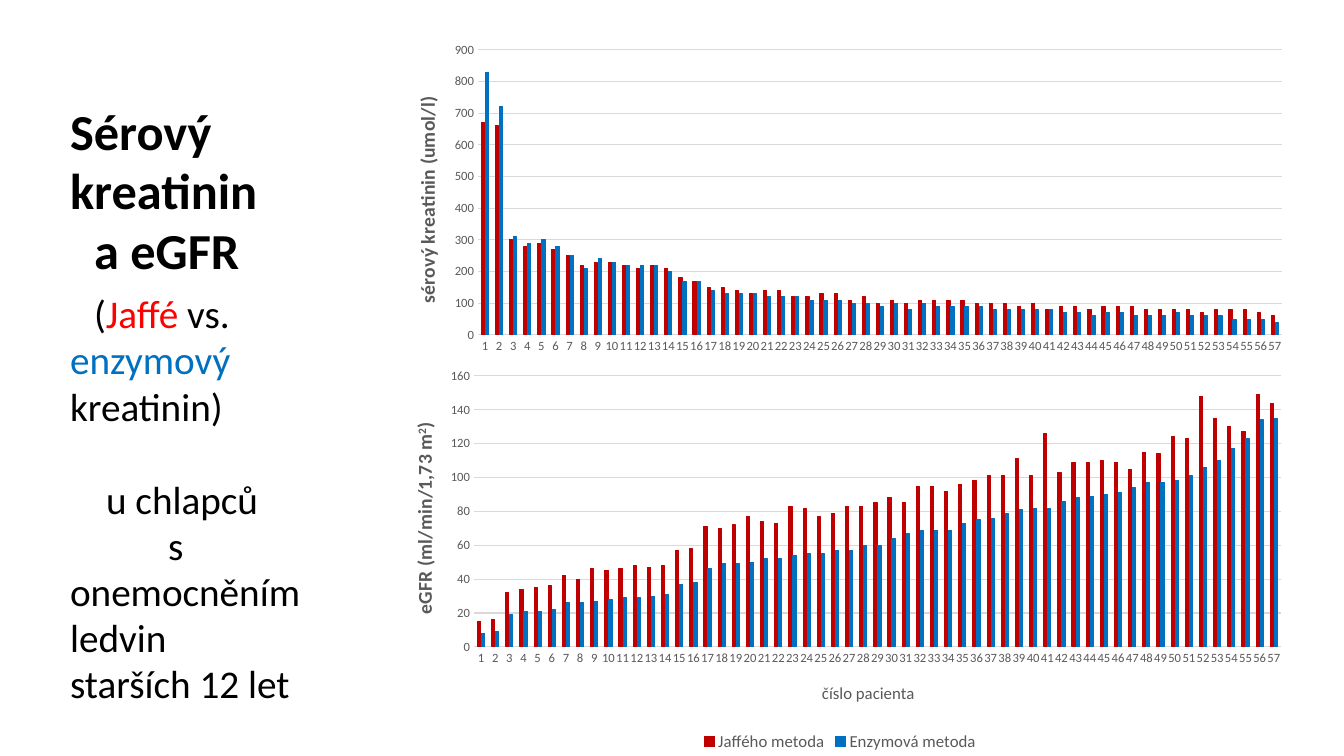
from lxml import etree
from pptx import Presentation
from pptx import util as u
from pptx.chart import data as chart_data
from pptx.dml.color import RGBColor
from pptx.enum import chart as ec, text as et
from pptx.oxml import ns

PX = 12192000 / 1344
FONT, GREY, GRID, BLACK = "Calibri", "595959", "D9D9D9", "000000"
RED, BLUE = "C00000", "0070C0"


def style(font, size, colour, bold=False):
    font.name, font.size, font.bold = FONT, u.Pt(size), bold
    font.color.rgb = RGBColor.from_string(colour)


def place(parent, frame, **lengths):
    layout = parent.find(ns.qn("c:layout"))
    if layout is None:
        layout = etree.Element(ns.qn("c:layout"))
        parent.insert(0, layout)
    manual = etree.SubElement(layout, ns.qn("c:manualLayout"))
    if "w" in lengths:
        etree.SubElement(manual, ns.qn("c:layoutTarget")).set("val", "inner")
    for key in "xy":
        etree.SubElement(manual, ns.qn(f"c:{key}Mode")).set("val", "edge")
    left, top, width, height = frame
    start = {"x": left, "y": top, "w": 0, "h": 0}
    full = {"x": width, "y": height, "w": width, "h": height}
    for key, length in lengths.items():
        share = (length - start[key]) / full[key]
        etree.SubElement(manual, ns.qn(f"c:{key}")).set("val", f"{share:.4f}")


presentation = Presentation()
presentation.slide_width, presentation.slide_height = round(1344 * PX), round(756 * PX)
slide = presentation.slides.add_slide(presentation.slide_layouts[5])

title = slide.shapes.title
title.left, title.top, title.width, title.height = [round(n * PX) for n in (60, 98, 312, 526)]
frame = title.text_frame
frame.word_wrap = True
frame.auto_size = et.MSO_AUTO_SIZE.NONE
frame.vertical_anchor = et.MSO_ANCHOR.TOP

title_paragraphs = [
    (0, 0, 36, [("Sérový kreatinin", BLACK)]),
    (24, 0, 36, [("a eGFR", BLACK)]),
    (24, 11, 28, [("(", BLACK), ("Jaffé", "FF0000"), (" vs. ", BLACK),
                  ("enzymový", BLUE), (" kreatinin)", BLACK)]),
    (36, 47, 28, [("u chlapců", BLACK)]),
    (98, 0, 28, [("s onemocněním ledvin", BLACK)]),
    (0, 0, 28, [("starších 12 let", BLACK)]),
]
for number, (indent, gap, size, runs) in enumerate(title_paragraphs):
    paragraph = frame.paragraphs[0] if number == 0 else frame.add_paragraph()
    paragraph.alignment = et.PP_ALIGN.LEFT
    paragraph.line_spacing = 0.98
    paragraph.space_before = round(gap * PX)
    paragraph._p.get_or_add_pPr().set("indent", str(round(indent * PX)))
    for words, colour in runs:
        run = paragraph.add_run()
        run.text = words
        style(run.font, size, colour, size == 36)

egfr = [
    [15, 16, 32, 34, 35, 36, 42, 40, 46, 45, 46, 48, 47, 48, 57, 58, 71, 70, 72,
     77, 74, 73, 83, 82, 77, 79, 83, 83, 85, 88, 85, 95, 95, 92, 96, 98, 101, 101,
     111, 101, 126, 103, 109, 109, 110, 109, 105, 115, 114, 124, 123, 148, 135, 130,
     127, 149, 144],
    [8, 9, 19, 21, 21, 22, 26, 26, 27, 28, 29, 29, 30, 31, 37, 38, 46, 49, 49,
     50, 52, 52, 54, 55, 55, 57, 57, 60, 60, 64, 67, 69, 69, 69, 73, 75, 76, 79,
     81, 82, 82, 86, 88, 89, 90, 91, 94, 97, 97, 98, 101, 106, 110, 117, 123, 134, 135],
]
creatinine = [
    [670, 660, 300, 280, 290, 270, 250, 220, 230, 230, 220, 210, 220, 210, 180, 170,
     150, 150, 140, 130, 140, 140, 120, 120, 130, 130, 110, 120, 100, 110, 100, 110,
     110, 110, 110, 100, 100, 100, 90, 100, 80, 90, 90, 80, 90, 90, 90, 80, 80, 80,
     80, 70, 80, 80, 80, 70, 60],
    [830, 720, 310, 290, 300, 280, 250, 210, 240, 230, 220, 220, 220, 200, 170, 170,
     140, 130, 130, 130, 120, 120, 120, 110, 110, 110, 100, 100, 90, 100, 80, 100,
     90, 90, 90, 90, 80, 80, 80, 80, 80, 70, 70, 60, 70, 70, 60, 60, 60, 70, 60, 60,
     60, 50, 50, 50, 40],
]
charts = [
    (egfr, (381, 361, 918, 395), (474, 376, 807, 271), 160, 20,
     ["eGFR (ml/min/1,73 m", "2", ")"], (408, 419), "číslo pacienta"),
    (creatinine, (383, 35, 918, 326), (478, 50, 804, 285), 900, 100,
     ["sérový kreatinin (umol/l)"], (410, 93), None),
]
for values, area, plot_area, maximum, step, value_title, title_spot, category_title in charts:
    table = chart_data.CategoryChartData(number_format="0")
    table.categories = [str(patient) for patient in range(1, 58)]
    for name, series_values in zip(["Jaffého metoda", "Enzymová metoda"], values):
        table.add_series(name, series_values)
    chart = slide.shapes.add_chart(
        ec.XL_CHART_TYPE.COLUMN_CLUSTERED, *[round(n * PX) for n in area], table).chart
    chart.has_title = False
    style(chart.font, 10, BLACK)

    plot = chart.plots[0]
    plot.gap_width, plot.overlap, plot.vary_by_categories = 219, -27, False
    for series, colour in zip(plot.series, [RED, BLUE]):
        series.format.fill.solid()
        series.format.fill.fore_color.rgb = RGBColor.from_string(colour)
        series.format.line.color.rgb = RGBColor.from_string(colour)
        series.format.line.width = u.Pt(0.75)
    left, top, width, height = plot_area
    place(chart._chartSpace.chart.plotArea, area, x=left, y=top, w=width, h=height)

    category_axis, value_axis = chart.category_axis, chart.value_axis
    for axis in (category_axis, value_axis):
        axis.major_tick_mark = axis.minor_tick_mark = ec.XL_TICK_MARK.NONE
        style(axis.tick_labels.font, 9, GREY)
    value_axis.minimum_scale, value_axis.maximum_scale = 0, maximum
    value_axis.major_unit = step
    value_axis.format.line.fill.background()
    value_axis.has_major_gridlines = True
    for line in (category_axis.format.line, value_axis.major_gridlines.format.line):
        line.color.rgb = RGBColor.from_string(GRID)
        line.width = u.Pt(0.75)

    axis_title = value_axis.axis_title
    body = axis_title.text_frame._txBody.bodyPr
    body.set("rot", "-5400000")
    body.set("vert", "horz")
    for words in value_title:
        run = axis_title.text_frame.paragraphs[0].add_run()
        run.text = words
        style(run.font, 14, GREY, True)
        if words == "2":
            run.font._rPr.set("baseline", "30000")
    place(axis_title._element, area, x=title_spot[0], y=title_spot[1])

    chart.has_legend = category_title is not None
    if category_title:
        axis_title = category_axis.axis_title
        run = axis_title.text_frame.paragraphs[0].add_run()
        run.text = category_title
        style(run.font, 12, GREY)
        place(axis_title._element, area, x=819, y=679)
        chart.legend.position = ec.XL_LEGEND_POSITION.BOTTOM
        chart.legend.include_in_layout = False
        style(chart.legend.font, 12, GREY)

presentation.save("out.pptx")
